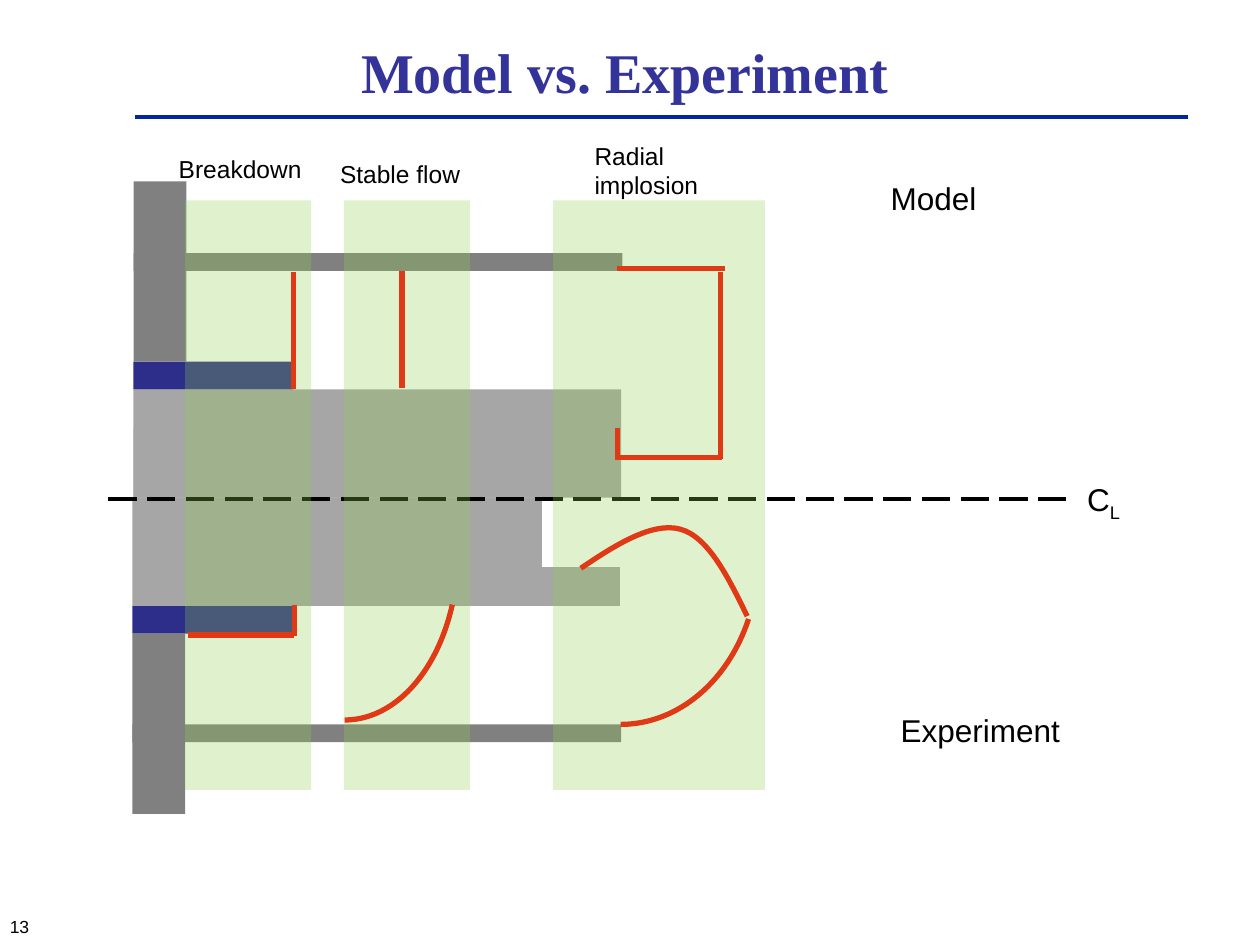
from dataclasses import dataclass

from lxml.etree import SubElement
from pptx import Presentation
from pptx.dml.color import RGBColor
from pptx.enum.dml import MSO_LINE
from pptx.enum.shapes import MSO_CONNECTOR, MSO_SHAPE
from pptx.enum.text import MSO_ANCHOR, MSO_AUTO_SIZE, PP_ALIGN
from pptx.oxml.ns import qn
from pptx.util import Inches, Pt


@dataclass(frozen=True)
class Theme:
    title: str = "333399"
    rule: str = "00279F"
    ink: str = "000000"
    core: str = "A6A6A6"
    wall: str = "808080"
    sleeve: str = "2D2D8A"
    sheath: str = "FF0000"
    band: str = "92D050"
    serif: str = "Times New Roman"
    sans: str = "Arial"
    head: int = 32
    large: int = 18
    label: int = 14
    small: int = 10


@dataclass(frozen=True)
class Box:
    left: float
    top: float
    width: float
    height: float


THEME = Theme()


def rgb(color):
    return RGBColor.from_string(color)


def add_text(slide, text, left, top, width, height, size=THEME.label, font=THEME.sans,
             color=THEME.ink, bold=False, align=PP_ALIGN.LEFT,
             anchor=MSO_ANCHOR.TOP, grow=True, sub=""):
    shape = slide.shapes.add_textbox(*map(Inches, (left, top, width, height)))
    frame = shape.text_frame
    frame.word_wrap = True
    frame.auto_size = MSO_AUTO_SIZE.SHAPE_TO_FIT_TEXT if grow else MSO_AUTO_SIZE.NONE
    frame.vertical_anchor = anchor
    para = frame.paragraphs[0]
    para.alignment = align
    for part in filter(None, (text, sub)):
        run = para.add_run()
        run.text = part
        run.font.name = font
        run.font.size = Pt(size)
        run.font.bold = bold
        run.font.color.rgb = rgb(color)
    if sub:
        run._r.get_or_add_rPr().set("baseline", "-25000")
    return shape


def add_rect(slide, left, top, width, height, color, alpha=None):
    shape = slide.shapes.add_shape(
        MSO_SHAPE.RECTANGLE, *map(Inches, (left, top, width, height)))
    shape.shadow.inherit = False
    shape.fill.solid()
    shape.fill.fore_color.rgb = rgb(color)
    shape.line.fill.background()
    if alpha:
        node = shape._element.spPr.find(qn("a:solidFill"))[0]
        SubElement(node, qn("a:alpha")).set("val", str(alpha * 1000))


def add_line(slide, x1, y1, x2, y2, color=THEME.sheath, width=3):
    line = slide.shapes.add_connector(
        MSO_CONNECTOR.STRAIGHT, *map(Inches, (x1, y1, x2, y2)))
    line.line.color.rgb = rgb(color)
    line.line.width = Pt(width)
    SubElement(line._element.spPr, qn("a:effectLst"))
    return line


def set_stroke(shape):
    shape.shadow.inherit = False
    shape.fill.background()
    shape.line.color.rgb = rgb(THEME.sheath)
    shape.line.width = Pt(3)


def add_arc(slide, left, top, width, height):
    arc = slide.shapes.add_shape(MSO_SHAPE.ARC, *map(Inches, (left, top, width, height)))
    arc.rotation = 90
    arc.adjustments[0] = 177.68
    arc.adjustments[1] = 0
    set_stroke(arc)


def add_curve(slide, points):
    start, *rest = [(Inches(x), Inches(y)) for x, y in points]
    pen = slide.shapes.build_freeform(*start)
    pen.add_line_segments(rest, close=False)
    curve = pen.convert_to_shape()
    steps = list(curve._element.iter(qn("a:lnTo")))
    for i in range(0, len(steps), 3):
        bend = SubElement(steps[i].getparent(), qn("a:cubicBezTo"))
        for step in steps[i:i + 3]:
            bend.append(step[0])
            step.getparent().remove(step)
    set_stroke(curve)


def draw_header(slide, box):
    add_line(slide, box.left, box.top + 0.63, box.left + box.width, box.top + 0.63,
             THEME.rule, 2)
    add_text(slide, "Model vs. Experiment", box.left + 0.1, box.top, 7.58, 0.53,
             size=THEME.head, font=THEME.serif, color=THEME.title, bold=True,
             align=PP_ALIGN.CENTER, anchor=MSO_ANCHOR.MIDDLE, grow=False)


def draw_half(slide, box, rim, upper=False):
    parts = (
        (0, 0.55, 3.25, THEME.core),
        (rim, 0.86 - rim, 3.87, THEME.core),
        (0.86, 0.22, 1.27, THEME.sleeve),
        (1.08, 1.43, 0.42, THEME.wall),
        (1.8, 0.14, box.width, THEME.wall),
    )
    for gap, height, width, color in parts:
        top = box.top + (box.height - gap - height if upper else gap)
        add_rect(slide, box.left, top, width, height, color)


def draw_axis(slide, box):
    mark = add_text(slide, "C", box.left + box.width, box.top, 0.58, box.height,
                    size=THEME.large, sub="L")
    y = box.top + box.height / 2
    line = add_line(slide, box.left, y, box.left + box.width, y, THEME.ink, 2)
    line.line.dash_style = MSO_LINE.LONG_DASH
    line.end_connect(mark, 1)


def draw_sheaths(slide, box):
    x, y = box.left, box.top
    lines = (
        (1.33, 2.09, 1.33, 1.16),
        (1.34, 4.05, 1.34, 3.8),
        (0.49, 4.04, 1.33, 4.04),
        (2.19, 2.08, 2.19, 1.15),
        (3.9, 2.65, 3.9, 2.4),
        (3.89, 2.63, 4.73, 2.63),
        (3.9, 1.13, 4.75, 1.13),
        (4.72, 2.64, 4.72, 1.16),
    )
    for x1, y1, x2, y2 in lines:
        add_line(slide, x + x1, y + y1, x + x2, y + y2)
    add_arc(slide, x + 0.4, y + 2.48, 2.67, 1.8)
    add_arc(slide, x + 2.59, y + 2.32, 2.67, 2.19)
    points = ((3.61, 3.51), (3.89, 3.32), (4.18, 3.14), (4.4, 3.2),
              (4.62, 3.26), (4.78, 3.58), (4.93, 3.89))
    add_curve(slide, [(x + a, y + b) for a, b in points])


def draw_phases(slide, box):
    phases = (
        ("Breakdown", 0, 1, -0.15, -0.42, 0.34),
        ("Stable flow", 1.26, 1, 1.13, -0.38, 0.34),
        ("Radial implosion", 2.92, 1.68, 3.15, -0.52, 0.57),
    )
    for _, left, width, *_ in phases:
        add_rect(slide, box.left + left, box.top, width, box.height, THEME.band, 28)
    for name, _, _, left, top, height in phases:
        add_text(slide, name, box.left + left, box.top + top, 1.21, height)


def draw_names(slide, box):
    add_text(slide, "Model", box.left, box.top, 2.01, 0.4, size=THEME.large)
    add_text(slide, "Experiment", box.left + 0.08, box.top + box.height - 0.4,
             2.01, 0.4, size=THEME.large)


def draw_footer(slide, box):
    add_text(slide, "13", box.left, box.top, box.width, box.height,
             size=THEME.small, align=PP_ALIGN.RIGHT, grow=False)


def main():
    deck = Presentation()
    deck.slide_width, deck.slide_height = Inches(10), Inches(7.5)
    slide = deck.slides.add_slide(deck.slide_layouts[6])
    draw_footer(slide, Box(-0.25, 7.22, 0.58, 0.5))
    draw_header(slide, Box(1.07, 0.3, 8.36, 0.63))
    draw_half(slide, Box(1.06, 1.44, 3.88, 2.51), 0, upper=True)
    draw_half(slide, Box(1.05, 3.95, 3.88, 2.51), 0.55)
    draw_names(slide, Box(6.97, 1.37, 2.09, 4.62))
    draw_axis(slide, Box(0.86, 3.76, 7.67, 0.4))
    draw_sheaths(slide, Box(1, 1, 5, 4.5))
    draw_phases(slide, Box(1.47, 1.59, 4.6, 4.68))
    deck.save("out.pptx")


if __name__ == "__main__":
    main()
